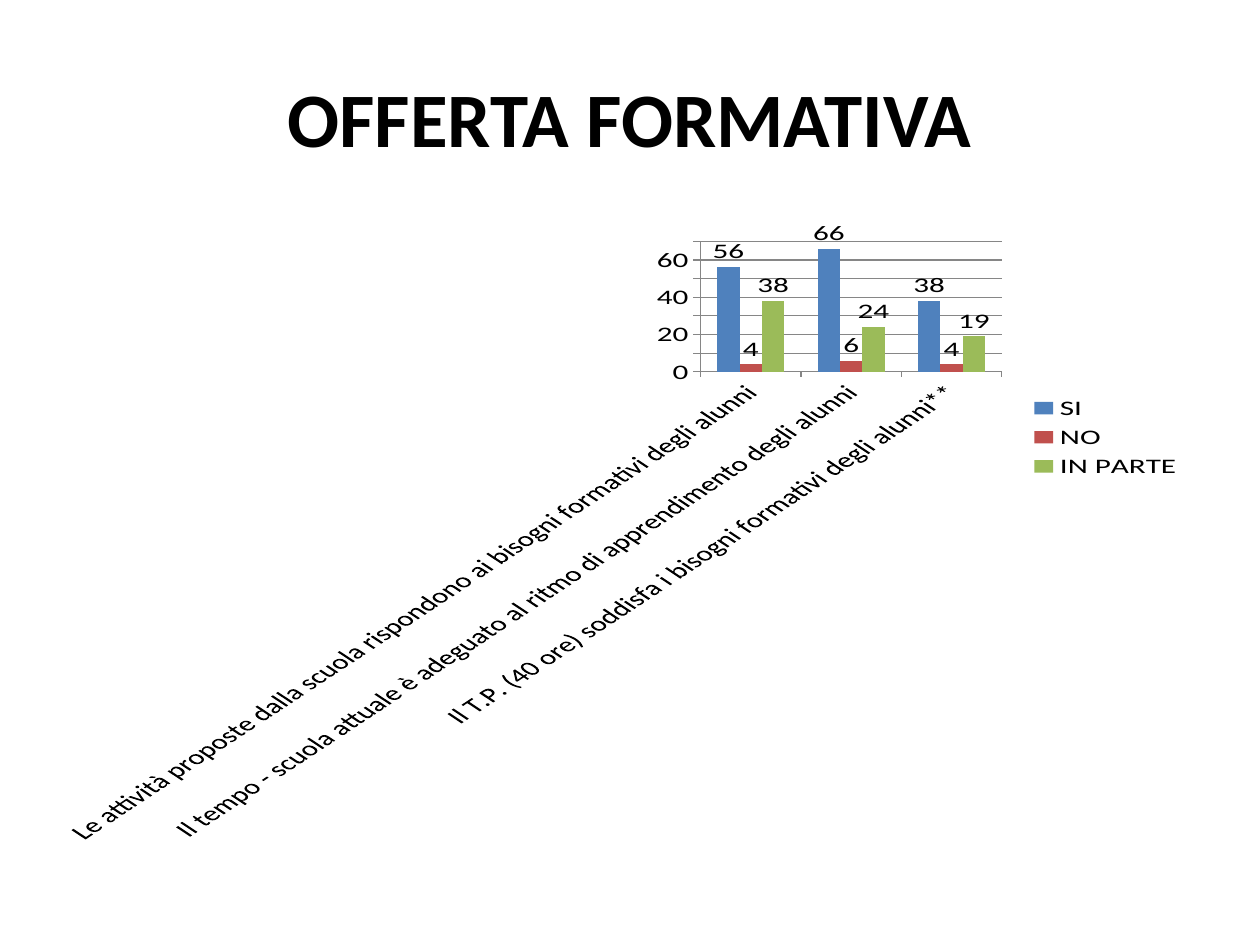
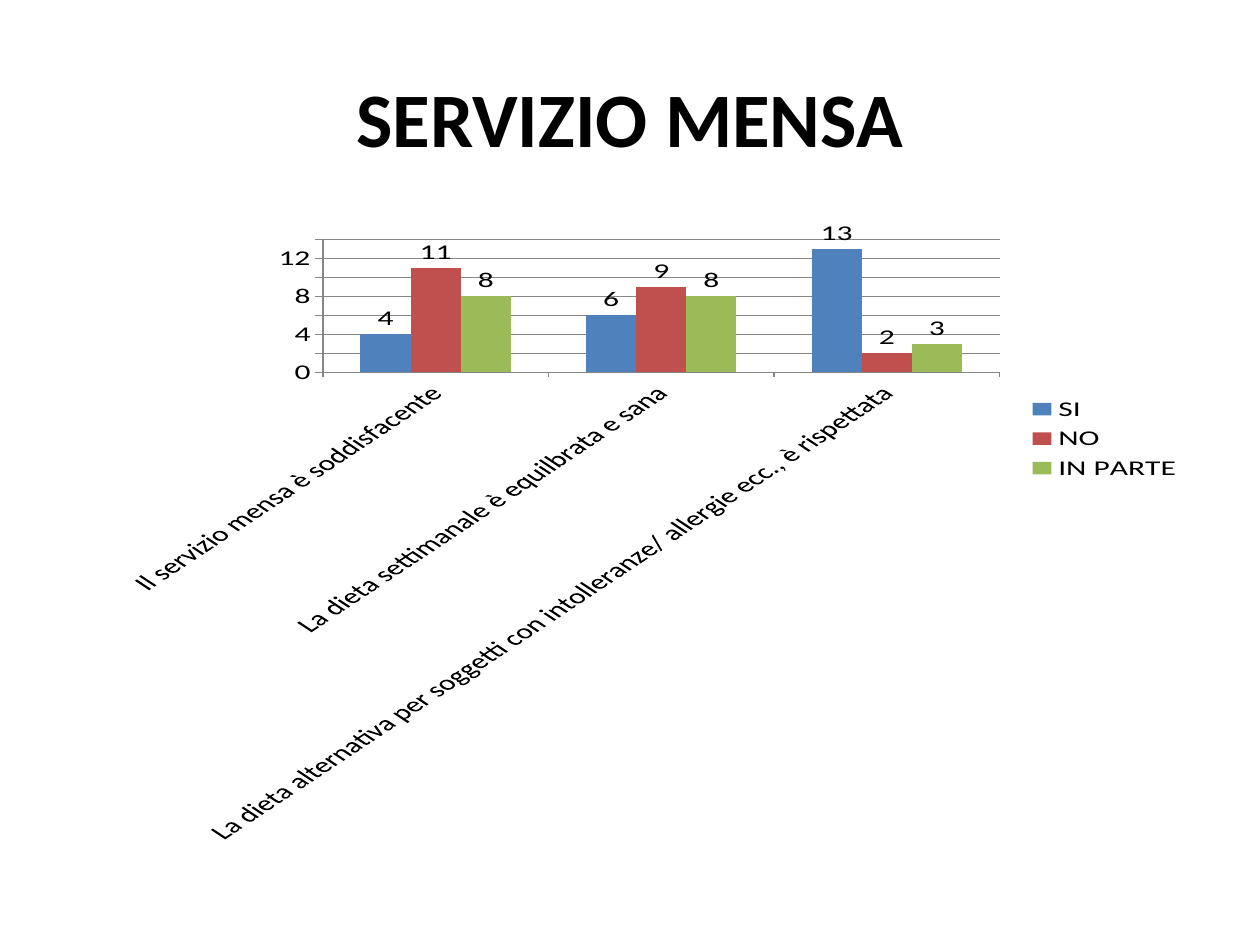
from dataclasses import dataclass

import pptx
import pptx.chart.data
import pptx.dml.color
import pptx.enum.chart
import pptx.enum.text
import pptx.util
from pptx.util import Inches

FONT = "Calibri"
BLACK = "000000"
AXIS_GREY = "868686"
ANSWER_COLORS = {"SI": "4F81BD", "NO": "C0504D", "IN PARTE": "9BBB59"}
LEFT, WIDTH = Inches(0.5), Inches(9)


@dataclass
class Question:
    text: str
    votes: tuple[int, int, int]  # same order as ANSWER_COLORS


@dataclass
class Survey:
    title: str
    axis_max: int
    axis_step: int
    questions: list[Question]


SURVEYS = [
    Survey("OFFERTA FORMATIVA", 70, 10, [
        Question("Le attività proposte dalla scuola rispondono ai bisogni "
                 "formativi degli alunni", (56, 4, 38)),
        Question("Il tempo - scuola attuale è adeguato al ritmo di "
                 "apprendimento degli alunni", (66, 6, 24)),
        Question("Il T.P. (40 ore) soddisfa i bisogni formativi degli alunni**",
                 (38, 4, 19)),
    ]),
    Survey("SERVIZIO MENSA", 14, 2, [
        Question("Il servizio mensa è soddisfacente", (4, 11, 8)),
        Question("La dieta settimanale è equilbrata e sana", (6, 9, 8)),
        Question("La dieta alternativa per soggetti con intolleranze/ "
                 "allergie ecc., è rispettata", (13, 2, 3)),
    ]),
]


def set_color(color_format, hex_color: str) -> None:
    """Colour a fill, a line's fill or a font."""
    if hasattr(color_format, "solid"):
        color_format.solid()
        color_format = color_format.fore_color
    else:
        color_format = color_format.color
    color_format.rgb = pptx.dml.color.RGBColor.from_string(hex_color)


def style_font(font, size: int, bold: bool = False) -> None:
    font.name = FONT
    font.size = pptx.util.Pt(size)
    font.bold = bold
    set_color(font, BLACK)


def add_title(slide, title: str) -> None:
    frame = slide.shapes.add_textbox(LEFT, Inches(0.3), WIDTH, Inches(1.25)).text_frame
    frame.word_wrap = True
    frame.vertical_anchor = pptx.enum.text.MSO_ANCHOR.MIDDLE
    frame.text = title
    heading = frame.paragraphs[0]
    heading.alignment = pptx.enum.text.PP_ALIGN.CENTER
    style_font(heading.runs[0].font, 44, bold=True)


def style_axes(chart, survey: Survey) -> None:
    votes_axis = chart.value_axis
    votes_axis.minimum_scale = 0
    votes_axis.maximum_scale = survey.axis_max
    votes_axis.major_unit = survey.axis_step
    votes_axis.has_major_gridlines = True
    set_color(votes_axis.major_gridlines.format.line.fill, AXIS_GREY)
    for axis in (chart.category_axis, votes_axis):
        axis.major_tick_mark = pptx.enum.chart.XL_TICK_MARK.OUTSIDE
        axis.minor_tick_mark = pptx.enum.chart.XL_TICK_MARK.NONE
        set_color(axis.format.line.fill, AXIS_GREY)


def add_answers_chart(slide, survey: Survey) -> None:
    answers = pptx.chart.data.CategoryChartData()
    answers.categories = [question.text for question in survey.questions]
    for index, answer in enumerate(ANSWER_COLORS):
        answers.add_series(answer, [question.votes[index] for question in survey.questions])

    chart = slide.shapes.add_chart(
        pptx.enum.chart.XL_CHART_TYPE.COLUMN_CLUSTERED,
        LEFT, Inches(1.75), WIDTH, Inches(4.95), answers).chart
    style_font(chart.font, 18)
    chart.has_title = False
    chart.has_legend = True
    chart.legend.position = pptx.enum.chart.XL_LEGEND_POSITION.RIGHT
    chart.legend.include_in_layout = False
    style_axes(chart, survey)

    # Columns and their values
    plot = chart.plots[0]
    plot.gap_width = 150
    plot.vary_by_categories = False
    for series in plot.series:
        set_color(series.format.fill, ANSWER_COLORS[series.name])
        series.invert_if_negative = False
        series.data_labels.show_value = True
        series.data_labels.position = pptx.enum.chart.XL_LABEL_POSITION.OUTSIDE_END


def main() -> None:
    deck = pptx.Presentation()
    deck.slide_width, deck.slide_height = Inches(10), Inches(7.5)
    for survey in SURVEYS:
        slide = deck.slides.add_slide(deck.slide_layouts[6])
        set_color(slide.background.fill, "FFFFFF")
        add_title(slide, survey.title)
        add_answers_chart(slide, survey)
    deck.save("out.pptx")


if __name__ == "__main__":
    main()
